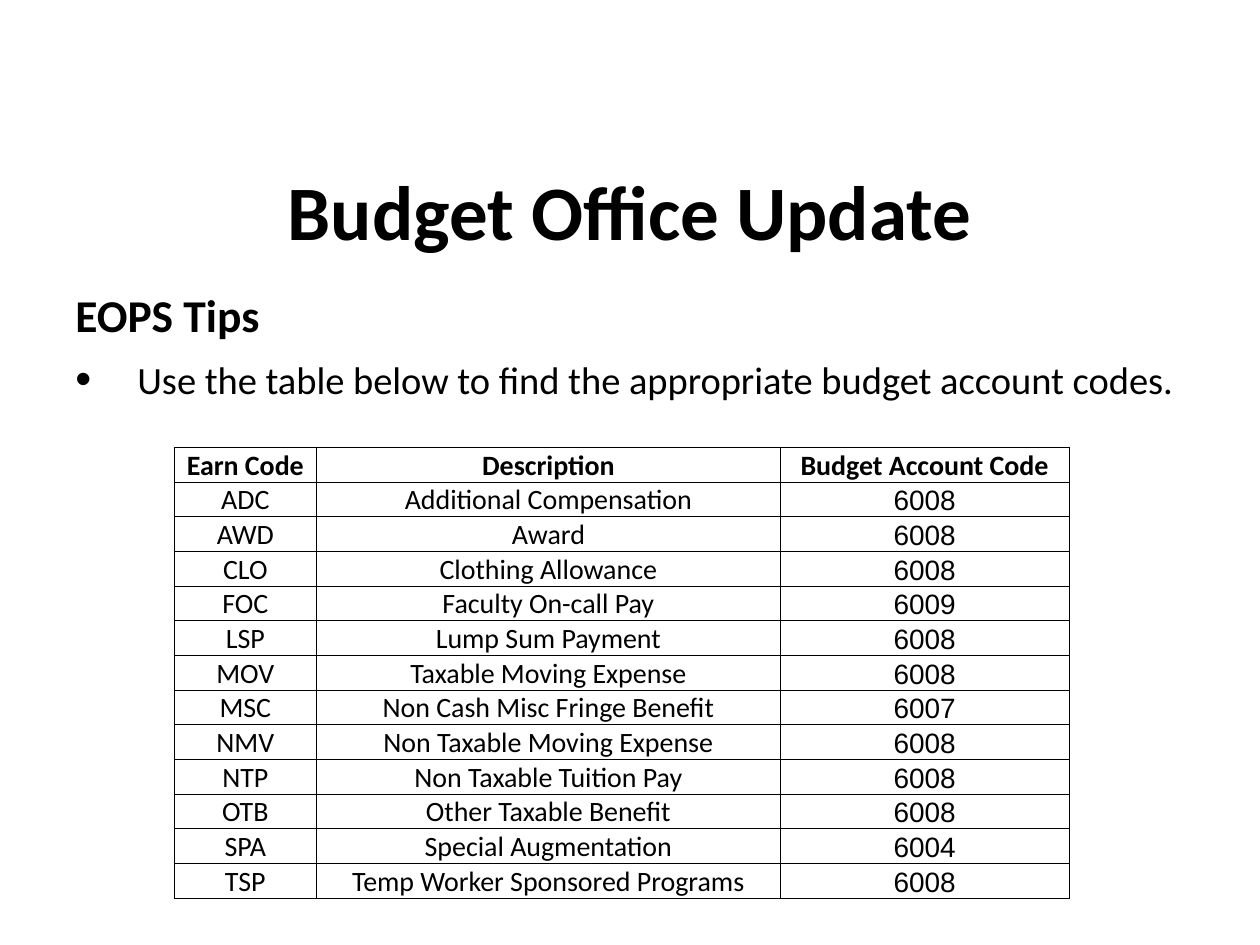
from lxml import etree
from pptx import Presentation
from pptx import util as u
from pptx.dml.color import RGBColor
from pptx.enum import text
from pptx.oxml.ns import qn

BLACK = RGBColor(0, 0, 0)
WHITE = RGBColor(255, 255, 255)

COLUMNS = [2.87, 9.35, 5.82]  # cm
HEADER = ("Earn Code", "Description", "Budget Account Code")
EARN_CODES = [
    ("ADC", "Additional Compensation", "6008"),
    ("AWD", "Award", "6008"),
    ("CLO", "Clothing Allowance", "6008"),
    ("FOC", "Faculty On-call Pay", "6009"),
    ("LSP", "Lump Sum Payment", "6008"),
    ("MOV", "Taxable Moving Expense", "6008"),
    ("MSC", "Non Cash Misc Fringe Benefit", "6007"),
    ("NMV", "Non Taxable Moving Expense", "6008"),
    ("NTP", "Non Taxable Tuition Pay", "6008"),
    ("OTB", "Other Taxable Benefit", "6008"),
    ("SPA", "Special Augmentation", "6004"),
    ("TSP", "Temp Worker Sponsored Programs", "6008"),
]


def set_all(target, values):
    for name, value in values.items():
        setattr(target, name, value)


def write(para, words, size, bold=False, font="Calibri"):
    span = para.add_run()
    span.text = words
    set_all(span.font, {"size": u.Pt(size), "bold": bold, "name": font})
    span.font.color.rgb = BLACK


def add_box(page, left, top, width, height, anchor):
    box = page.shapes.add_textbox(u.Cm(left), u.Cm(top), u.Cm(width), u.Cm(height))
    set_all(box.text_frame, {"word_wrap": True, "vertical_anchor": anchor})
    return box.text_frame


def add_bullet(para, indent):
    props = para._p.get_or_add_pPr()
    props.set("marL", str(u.Cm(indent)))
    props.set("indent", str(-u.Cm(indent)))
    etree.SubElement(props, qn("a:buSzPct"), val="118000")
    etree.SubElement(props, qn("a:buFont"), typeface="Arial")
    etree.SubElement(props, qn("a:buChar"), char="•")


def add_borders(cell):
    props = cell._tc.get_or_add_tcPr()
    for position, side in enumerate(("a:lnL", "a:lnR", "a:lnT", "a:lnB")):
        line = etree.Element(qn(side), w=str(u.Pt(0.5)))
        fill = etree.SubElement(line, qn("a:solidFill"))
        etree.SubElement(fill, qn("a:srgbClr"), val=str(BLACK))
        props.insert(position, line)


def fill_cell(cell, words, is_header, is_account):
    anchor = text.MSO_ANCHOR.BOTTOM if is_header or is_account else text.MSO_ANCHOR.TOP
    set_all(cell, {
        "margin_left": u.Cm(0.02), "margin_right": u.Cm(0.02),
        "margin_top": u.Cm(0.02), "margin_bottom": 0,
        "vertical_anchor": anchor,
    })
    if anchor == text.MSO_ANCHOR.TOP:
        cell.fill.solid()
        cell.fill.fore_color.rgb = WHITE
    else:
        cell.fill.background()
    add_borders(cell)
    para = cell.text_frame.paragraphs[0]
    para.alignment = text.PP_ALIGN.CENTER
    font = "Arial" if is_account and not is_header else "Calibri"
    write(para, words, 16, is_header, font)


def add_code_table(page):
    rows = [HEADER] + EARN_CODES
    row_height = 0.7
    table = page.shapes.add_table(
        len(rows), len(COLUMNS), u.Cm(3.51), u.Cm(9.02),
        u.Cm(sum(COLUMNS)), u.Cm(row_height * len(rows))).table
    for column, width in zip(table.columns, COLUMNS):
        column.width = u.Cm(width)
    for r, row in enumerate(rows):
        table.rows[r].height = u.Cm(row_height)
        for c, words in enumerate(row):
            fill_cell(table.cell(r, c), words, r == 0, c == len(COLUMNS) - 1)


def main():
    deck = Presentation()
    set_all(deck, {"slide_width": u.Cm(25.4), "slide_height": u.Cm(19.05)})
    page = deck.slides.add_slide(deck.slide_layouts[6])

    # Title
    title = add_box(page, 1.27, 3.12, 22.86, 2.21, text.MSO_ANCHOR.MIDDLE).paragraphs[0]
    title.alignment = text.PP_ALIGN.CENTER
    write(title, "Budget Office Update", 44, bold=True)

    # Heading and tip
    body = add_box(page, 1.27, 5.67, 22.86, 13.08, text.MSO_ANCHOR.TOP)
    write(body.paragraphs[0], "EOPS Tips", 26, bold=True)
    tip = body.add_paragraph()
    tip.space_before = u.Pt(8)
    add_bullet(tip, 1.25)
    write(tip, "Use the table below to find the appropriate budget account codes.", 22)

    # Earn code table
    add_code_table(page)

    deck.save("out.pptx")


if __name__ == "__main__":
    main()
